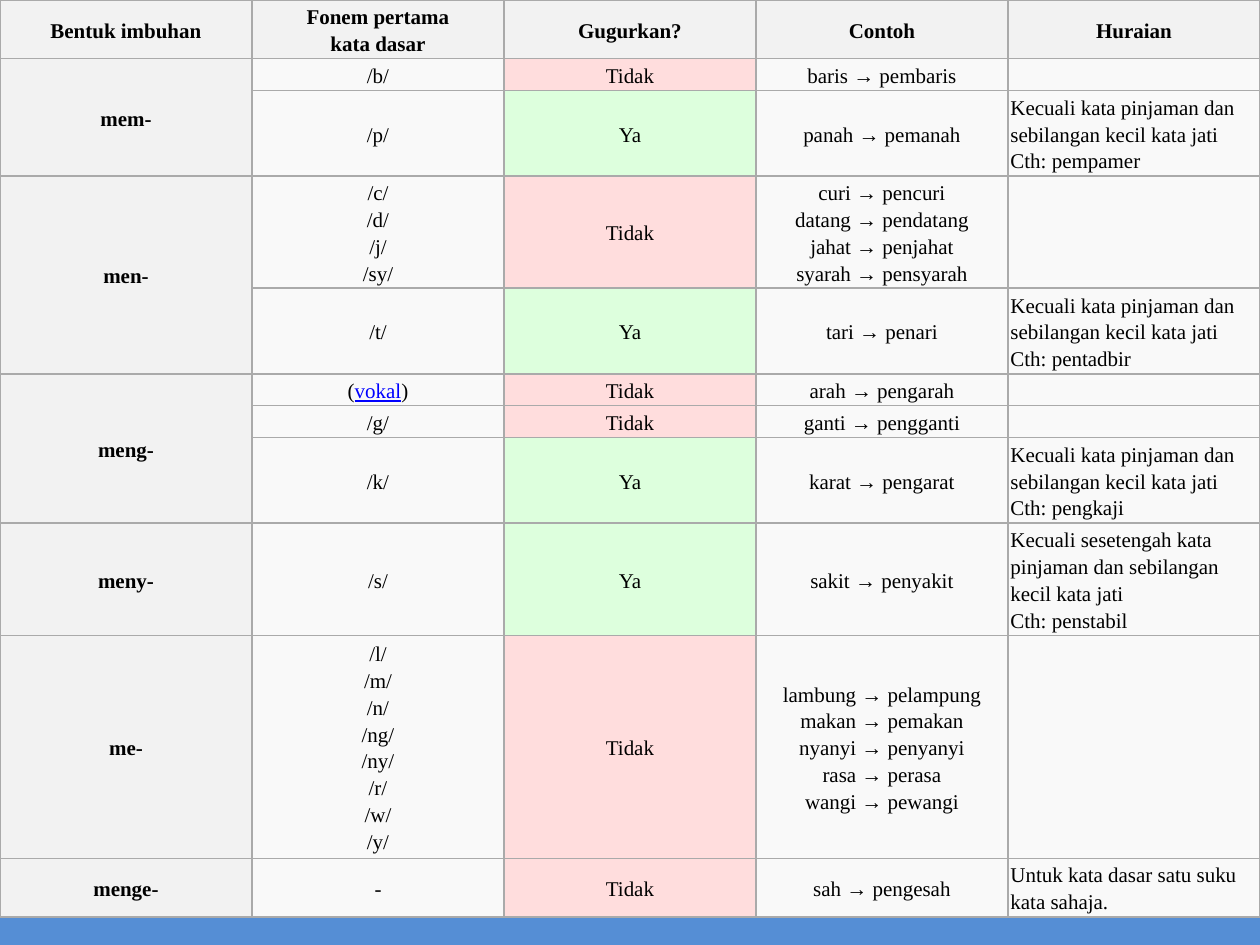
from dataclasses import dataclass

from lxml.etree import SubElement
from pptx import Presentation
from pptx.dml.color import RGBColor
from pptx.enum.text import MSO_ANCHOR, PP_ALIGN
from pptx.oxml.ns import qn
from pptx.util import Inches, Pt


@dataclass(frozen=True)
class Theme:
    font: str = "Times New Roman"
    size: int = 12
    text: str = "000000"
    link: str = "0000FF"
    background: str = "558ED5"
    heading: str = "F2F2F2"
    body: str = "F9F9F9"
    yes: str = "DDFFDD"
    no: str = "FFDDDD"
    border: str = "AAAAAA"
    border_width: int = 1


theme = Theme()
LINK = "vokal"
EXCEPT = "Kecuali kata pinjaman dan sebilangan kecil kata jati\nCth: "

# Row height, then prefix form, first phoneme, dropped or not, examples, notes.
# A prefix of None continues the one above.
ROWS = [
    (0.46, "Bentuk imbuhan", "Fonem pertama\nkata dasar", "Gugurkan?", "Contoh", "Huraian"),
    (0.25, "mem-", "/b/", "Tidak", "baris → pembaris", ""),
    (0.68, None, "/p/", "Ya", "panah → pemanah", EXCEPT + "pempamer"),
    (0.89, "men-", "/c/\n/d/\n/j/\n/sy/", "Tidak",
     "curi → pencuri\ndatang → pendatang\njahat → penjahat\nsyarah → pensyarah", ""),
    (0.68, None, "/t/", "Ya", "tari → penari", EXCEPT + "pentadbir"),
    (0.25, "meng-", "(vokal)", "Tidak", "arah → pengarah", ""),
    (0.25, None, "/g/", "Tidak", "ganti → pengganti", ""),
    (0.68, None, "/k/", "Ya", "karat → pengarat", EXCEPT + "pengkaji"),
    (0.89, "meny-", "/s/", "Ya", "sakit → penyakit",
     "Kecuali sesetengah kata pinjaman dan sebilangan kecil kata jati\nCth: penstabil"),
    (1.77, "me-", "/l/\n/m/\n/n/\n/ng/\n/ny/\n/r/\n/w/\n/y/", "Tidak",
     "lambung → pelampung\nmakan → pemakan\nnyanyi → penyanyi\nrasa → perasa\nwangi → pewangi", ""),
    (0.46, "menge-", "-", "Tidak", "sah → pengesah", "Untuk kata dasar satu suku kata sahaja."),
]
COLS = 5
NOTES = COLS - 1


def set_borders(cell):
    """Draw all four sides; must run before the cell gets its fill."""
    tc_pr = cell._tc.get_or_add_tcPr()
    for side in ("a:lnL", "a:lnR", "a:lnT", "a:lnB"):
        ln = SubElement(tc_pr, qn(side), w=str(Pt(theme.border_width)))
        fill = SubElement(ln, qn("a:solidFill"))
        SubElement(fill, qn("a:srgbClr"), val=theme.border)


def write_text(p, text, bold, align):
    p.alignment = align
    p.line_spacing = 1.15
    p.font.name = theme.font
    p.font.size = Pt(theme.size)
    p.font.bold = bold
    p.font.color.rgb = RGBColor.from_string(theme.text)
    if not text:
        p._p.get_or_add_endParaRPr().set("sz", str(theme.size * 100))
    elif LINK in text:
        before, after = text.split(LINK)
        for part in (before, LINK, after):
            r = p.add_run()
            r.text = part
            if part == LINK:
                r.font.underline = True
                r.font.color.rgb = RGBColor.from_string(theme.link)
    else:
        for i, line in enumerate(text.split("\n")):
            if i:
                p.add_line_break()
            p.add_run().text = line


prs = Presentation()
prs.slide_width, prs.slide_height = Inches(10), Inches(7.5)
s = prs.slides.add_slide(prs.slide_layouts[6])
s.background.fill.solid()
s.background.fill.fore_color.rgb = RGBColor.from_string(theme.background)

height = sum(row[0] for row in ROWS)
table = s.shapes.add_table(len(ROWS), COLS, 0, 0, Inches(10), Inches(height)).table
table.first_row = False
table.horz_banding = False
for col in table.columns:
    col.width = Inches(2)

answer_fills = {"Ya": theme.yes, "Tidak": theme.no}
for i, (row_height, *texts) in enumerate(ROWS):
    table.rows[i].height = Inches(row_height)
    for j, text in enumerate(texts):
        cell = table.cell(i, j)
        heading = i == 0 or j == 0
        cell.vertical_anchor = MSO_ANCHOR.MIDDLE
        cell.margin_left = cell.margin_right = Inches(0.02)
        cell.margin_top = cell.margin_bottom = Inches(0.02)
        set_borders(cell)
        cell.fill.solid()
        color = theme.heading if heading else answer_fills.get(text, theme.body)
        cell.fill.fore_color.rgb = RGBColor.from_string(color)
        align = PP_ALIGN.LEFT if j == NOTES and not heading else PP_ALIGN.CENTER
        write_text(cell.text_frame.paragraphs[0], text, heading, align)

# Each named prefix spans the rows up to the next one.
starts = [i for i, row in enumerate(ROWS) if row[1]]
for start, end in zip(starts, starts[1:] + [len(ROWS)]):
    if end - start > 1:
        table.cell(start, 0).merge(table.cell(end - 1, 0))

prs.save("out.pptx")
